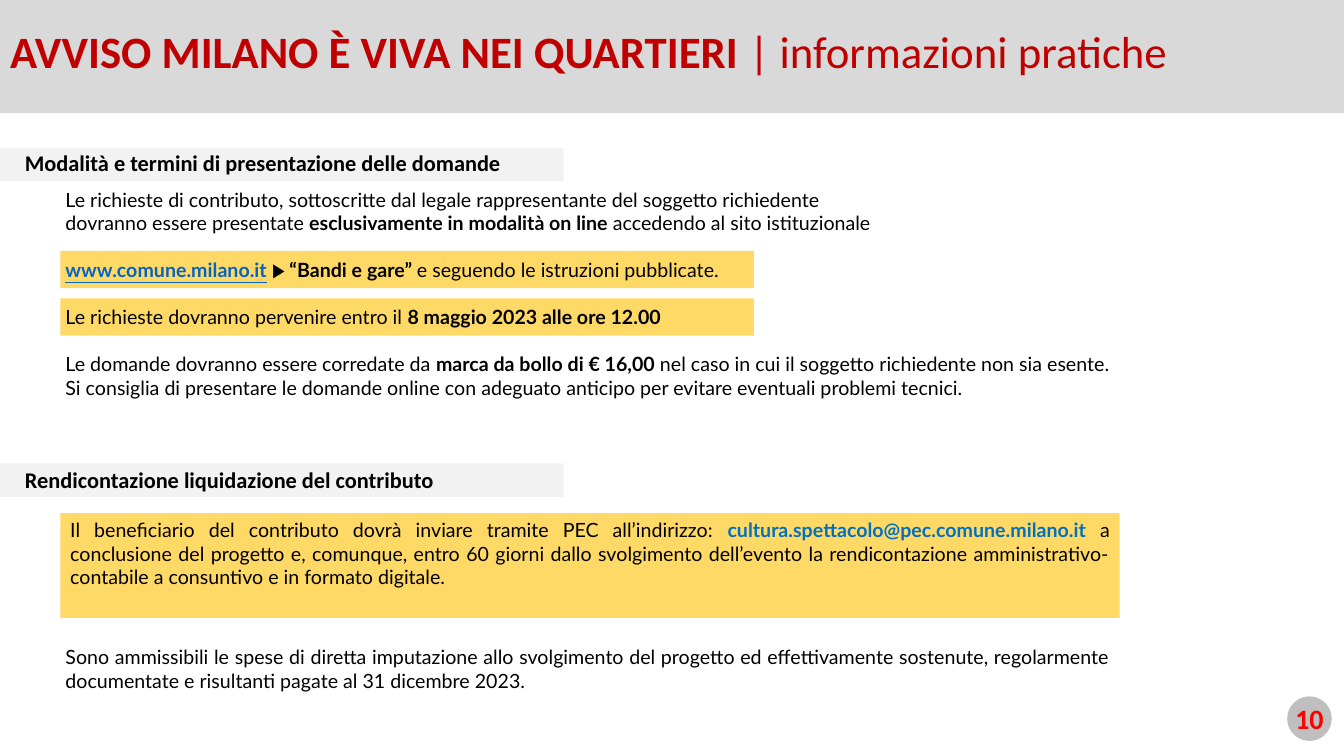
from pptx import Presentation
from pptx import util as u
from pptx.dml.color import RGBColor
from pptx.enum import shapes, text

COLORS = {"red": "C00000", "number": "FF0000", "black": "000000", "link": "0563C1",
          "mail": "0070C0", "banner": "D9D9D9", "strip": "F2F2F2",
          "highlight": "FFD966", "badge": "BFBFBF"}

TITLE = [[("AVVISO MILANO È VIVA NEI QUARTIERI ", {"bold": True}),
          ("| informazioni pratiche", {})]]
SECTIONS = [("Modalità e termini di presentazione delle domande", 3.73, 3.63),
            ("Rendicontazione liquidazione del contributo", 11.68, 11.61)]
HIGHLIGHT_TOPS = [6.32, 7.52]
APPLICATION = [
    [("Le richieste di contributo, sottoscritte dal legale rappresentante del soggetto richiedente", {})],
    [("dovranno essere presentate ", {}),
     ("esclusivamente in modalità on line ", {"bold": True}),
     ("accedendo al sito istituzionale ", {})],
    [("www.comune.milano.it", {"bold": True, "underline": True, "color": "link"}),
     (" ", {}), ("▶ ", {"name": "Calibri"}),
     ("“Bandi e gare” ", {"bold": True}),
     ("e seguendo le istruzioni pubblicate. ", {})],
    [("Le richieste dovranno pervenire entro il ", {}),
     ("8 maggio 2023 alle ore 12.00", {"bold": True})],
    [("Le domande dovranno essere corredate da ", {}),
     ("marca da bollo di € 16,00 ", {"bold": True}),
     ("nel caso in cui il soggetto richiedente non sia esente. ", {})],
    [("Si consiglia di presentare le domande online con adeguato anticipo per evitare "
      "eventuali problemi tecnici.", {})],
]
SPACED = {2, 3, 4}
REPORTING = [[
    ("Il beneficiario del contributo dovrà inviare tramite PEC all’indirizzo: ", {}),
    ("cultura.spettacolo@pec.comune.milano.it ", {"bold": True, "color": "mail"}),
    ("a conclusione del progetto e, comunque, entro 60 giorni dallo svolgimento dell’evento "
     "la rendicontazione amministrativo-contabile a consuntivo e in formato digitale. ", {})]]
EXPENSES = [[("Sono ammissibili le spese di diretta imputazione allo svolgimento del progetto ed "
              "effettivamente sostenute, regolarmente documentate e risultanti pagate al "
              "31 dicembre 2023.", {})]]

BASE = {"bold": False, "color": "black"}
BODY = {**BASE, "name": "Lato", "size": u.Pt(14)}
HEADING = {**BASE, "name": "Calibri", "size": u.Pt(16), "bold": True}
HEADLINE = {**BASE, "name": "Calibri", "size": u.Pt(32), "color": "red"}
NUMBER = {**HEADING, "size": u.Pt(20), "color": "number"}
JUSTIFIED = {"alignment": text.PP_ALIGN.JUSTIFY}


def set_fill(shape, color):
    shape.fill.solid()
    shape.fill.fore_color.rgb = RGBColor.from_string(COLORS[color])


def add_block(page, kind, place, color):
    shape = page.shapes.add_shape(kind, *map(u.Cm, place))
    shape.shadow.inherit = False
    set_fill(shape, color)
    shape.line.fill.background()
    return shape


def write(box, paragraphs, style, layout, anchor=text.MSO_ANCHOR.TOP, spaced=()):
    frame = box.text_frame
    frame.word_wrap = True
    frame.auto_size = text.MSO_AUTO_SIZE.NONE
    frame.vertical_anchor = anchor
    for index, spans in enumerate(paragraphs):
        para = frame.add_paragraph() if index else frame.paragraphs[0]
        for name, value in layout.items():
            setattr(para, name, value)
        if index in spaced:
            para.space_before = u.Pt(16.8)
        for words, changes in spans:
            span = para.add_run()
            span.text = words
            for name, value in {**style, **changes}.items():
                if name == "color":
                    span.font.color.rgb = RGBColor.from_string(COLORS[value])
                else:
                    setattr(span.font, name, value)


def add_text(page, place, *content, **options):
    write(page.shapes.add_textbox(*map(u.Cm, place)), *content, **options)


def main():
    deck = Presentation()
    deck.slide_width, deck.slide_height = u.Cm(33.87), u.Cm(19.05)
    page = deck.slides.add_slide(deck.slide_layouts[5])
    rectangle = shapes.MSO_SHAPE.RECTANGLE
    left = {"alignment": text.PP_ALIGN.LEFT}
    middle = text.MSO_ANCHOR.MIDDLE

    title = page.shapes.title
    title.left, title.top, title.width, title.height = map(u.Cm, (0, -0.15, 33.87, 3))
    set_fill(title, "banner")
    write(title, TITLE, HEADLINE, {**left, "line_spacing": 0.9}, anchor=middle)

    for heading, strip_top, text_top in SECTIONS:
        add_block(page, rectangle, (0, strip_top, 14.2, 0.84), "strip")
        add_text(page, (0.38, text_top, 17.15, 0.94), [[(heading, {})]], HEADING, left)

    for top in HIGHLIGHT_TOPS:
        add_block(page, rectangle, (1.52, top, 17.48, 0.94), "highlight")
    add_text(page, (1.4, 4.6, 30.2, 6.25), APPLICATION, BODY, JUSTIFIED, spaced=SPACED)

    note = add_block(page, rectangle, (1.52, 12.93, 26.7, 2.64), "highlight")
    write(note, REPORTING, BODY, JUSTIFIED)
    add_text(page, (1.4, 16.13, 26.82, 1.45), EXPENSES, BODY, JUSTIFIED)

    add_block(page, shapes.MSO_SHAPE.OVAL, (32.44, 17.55, 1.12, 1.12), "badge")
    add_text(page, (31.93, 17.6, 1.68, 1.02), [[("10", {})]], NUMBER,
             {"alignment": text.PP_ALIGN.RIGHT}, anchor=middle)
    deck.save("out.pptx")


if __name__ == "__main__":
    main()
